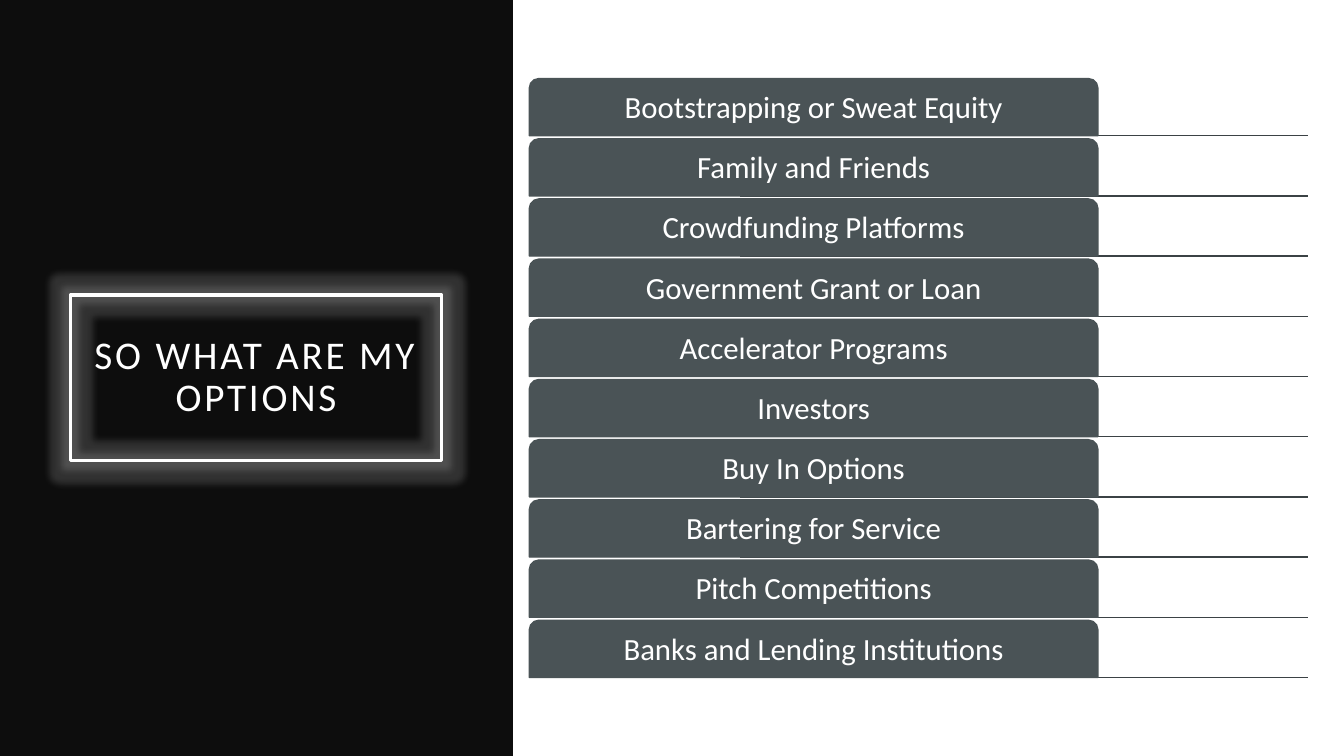
from dataclasses import dataclass

from lxml import etree
from pptx import Presentation
from pptx.dml.color import RGBColor
from pptx.enum.shapes import MSO_CONNECTOR, MSO_SHAPE
from pptx.enum.text import MSO_ANCHOR, PP_ALIGN
from pptx.oxml.ns import qn
from pptx.util import Cm, Pt

RECTANGLE = MSO_SHAPE.RECTANGLE
TAB = MSO_SHAPE.ROUND_2_SAME_RECTANGLE
STRAIGHT = MSO_CONNECTOR.STRAIGHT
MIDDLE = MSO_ANCHOR.MIDDLE
CENTER = PP_ALIGN.CENTER


@dataclass(frozen=True)
class Theme:
    font: str = "Calibri"
    panel: str = "0D0D0D"
    light: str = "FFFFFF"
    tab: str = "4A5356"
    rule: str = "3B4245"
    title_size: float = 28
    option_size: float = 22
    title_spacing: int = 200
    frame_width: float = 2.5
    rule_width: float = 1


@dataclass(frozen=True)
class Box:
    left: float
    top: float
    width: float
    height: float

    def lengths(self):
        return Cm(self.left), Cm(self.top), Cm(self.width), Cm(self.height)


THEME = Theme()
SLIDE_WIDTH, SLIDE_HEIGHT = 33.87, 19.05
TITLE = "SO WHAT ARE MY OPTIONS"
OPTIONS = [
    "Bootstrapping or Sweat Equity",
    "Family and Friends",
    "Crowdfunding Platforms",
    "Government Grant or Loan",
    "Accelerator Programs",
    "Investors",
    "Buy In Options",
    "Bartering for Service",
    "Pitch Competitions",
    "Banks and Lending Institutions",
]


def color(value):
    return RGBColor.from_string(value)


def add_block(page, kind, box, fill=None, line=None, line_width=1):
    shape = page.shapes.add_shape(kind, *box.lengths())
    shape.shadow.inherit = False
    if fill:
        shape.fill.solid()
        shape.fill.fore_color.rgb = color(fill)
    else:
        shape.fill.background()
    if line:
        shape.line.color.rgb = color(line)
        shape.line.width = Pt(line_width)
    else:
        shape.line.fill.background()
    return shape


def write_text(shape, text, size, inset):
    frame = shape.text_frame
    frame.word_wrap = True
    frame.vertical_anchor = MIDDLE
    frame.margin_left = frame.margin_right = Cm(inset)
    frame.margin_top = frame.margin_bottom = Cm(inset)
    para = frame.paragraphs[0]
    para.text = text
    para.alignment = CENTER
    para.line_spacing = 0.9
    para.font.name = THEME.font
    para.font.size = Pt(size)
    para.font.color.rgb = color(THEME.light)
    return para


def add_glow(shape, value, radius, opacity):
    effects = shape._element.spPr.find(qn("a:effectLst"))
    glow = etree.SubElement(effects, qn("a:glow"), rad=str(Cm(radius)))
    tint = etree.SubElement(glow, qn("a:srgbClr"), val=value)
    etree.SubElement(tint, qn("a:alpha"), val=str(opacity * 1000))


def add_rule(page, left, right, height):
    rule = page.shapes.add_connector(STRAIGHT, Cm(left), Cm(height), Cm(right), Cm(height))
    rule.line.color.rgb = color(THEME.rule)
    rule.line.width = Pt(THEME.rule_width)
    etree.SubElement(rule._element.spPr, qn("a:effectLst"))


def add_title_panel(page, box):
    add_block(page, RECTANGLE, box, fill=THEME.panel)
    frame_box = Box(box.left + 1.78, box.top + 7.44, 9.35, 4.17)
    frame = add_block(page, RECTANGLE, frame_box, line=THEME.light, line_width=THEME.frame_width)
    add_glow(frame, THEME.light, 0.35, 15)
    para = write_text(frame, TITLE, THEME.title_size, 0.51)
    para.runs[0].font._element.set("spc", str(THEME.title_spacing))


def add_option_list(page, box):
    tab_height = 1.44
    pitch = (box.height - tab_height) / (len(OPTIONS) - 1)
    tops = [box.top + pitch * index for index in range(len(OPTIONS))]
    for top in tops:
        add_rule(page, box.left + box.width * 0.27, box.left + box.width, top + tab_height)
    for top, option in zip(tops, OPTIONS):
        tab_box = Box(box.left, top, box.width * 0.73, tab_height)
        tab = add_block(page, TAB, tab_box, fill=THEME.tab, line=THEME.tab)
        write_text(tab, option, THEME.option_size, 0.12)


def main():
    deck = Presentation()
    deck.slide_width, deck.slide_height = Cm(SLIDE_WIDTH), Cm(SLIDE_HEIGHT)
    page = deck.slides.add_slide(deck.slide_layouts[6])
    add_title_panel(page, Box(0, 0, 12.93, SLIDE_HEIGHT))
    add_option_list(page, Box(13.34, 1.98, 19.63, 15.09))
    deck.save("out.pptx")


if __name__ == "__main__":
    main()
